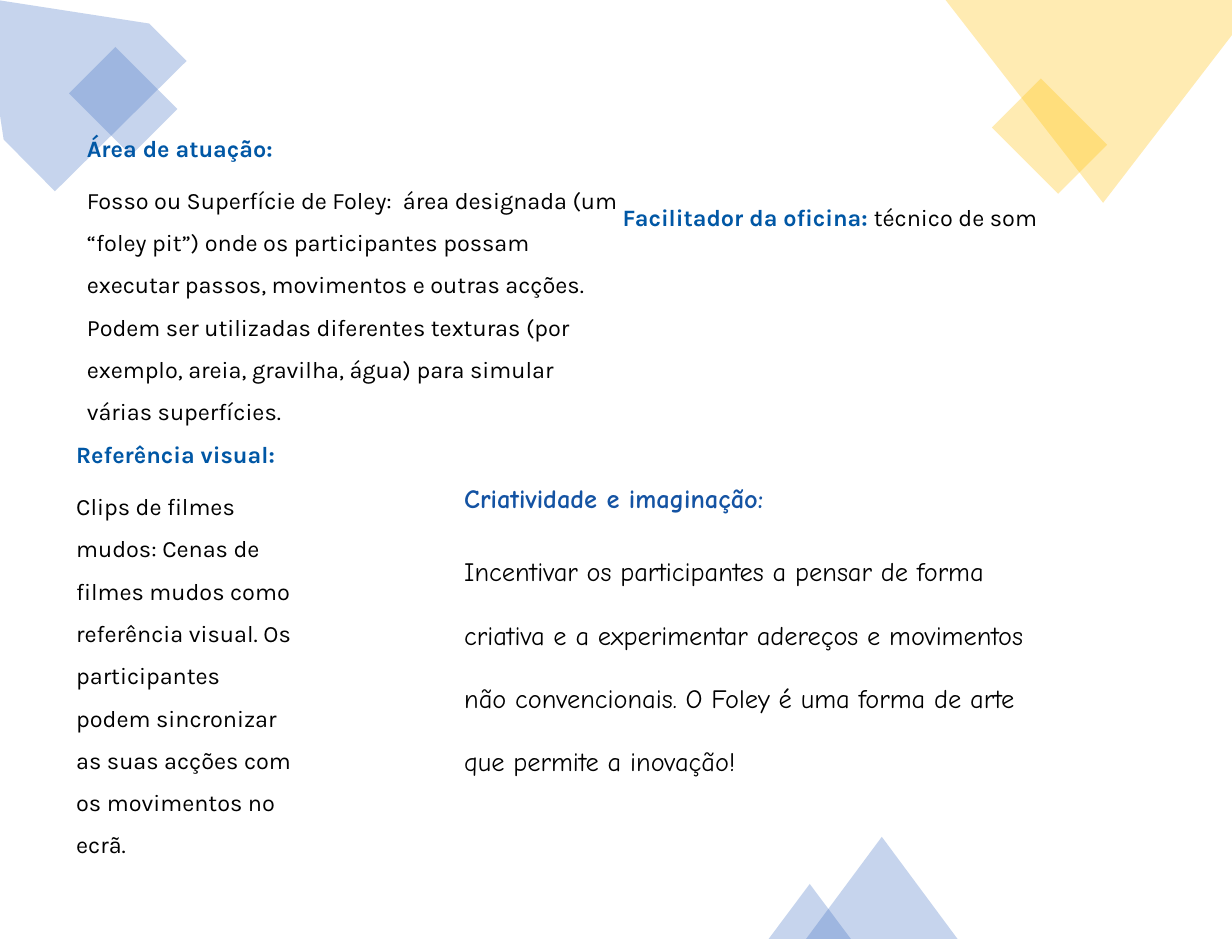
from lxml import etree
from pptx import Presentation, util as u
from pptx.dml.color import RGBColor
from pptx.enum import shapes as s, text as t
from pptx.oxml.ns import qn

BLUE = RGBColor(0x44, 0x72, 0xC4)
GOLD = RGBColor(0xFF, 0xC0, 0x00)
NAVY = RGBColor(0x00, 0x57, 0xA5)
COBALT = RGBColor(0x14, 0x53, 0xA3)
BLACK = RGBColor(0, 0, 0)

RECT = s.MSO_SHAPE.RECTANGLE
PEAK = s.MSO_SHAPE.ISOSCELES_TRIANGLE

CORNERS = [
    (BLUE, [(3.23, 0.51), (0, 0.01), (0, 2.49), (0.08, 3.02),
            (1.19, 4.14), (4.04, 1.32)]),
    (GOLD, [(26.67, 0), (20.47, 0), (23.88, 4.39), (26.67, 0.76)]),
]
FORMS = [
    (RECT, BLUE, (1.96, 1.24, 1.42, 1.9), 315),
    (RECT, GOLD, (21.97, 1.93, 1.5, 2.03), 315),
    (PEAK, BLUE, (17.45, 18.11, 3.28, 2.21), 0),
    (PEAK, BLUE, (16.64, 19.13, 1.78, 1.19), 0),
]

KARLA = dict(font="Karla", size=14.4, color=NAVY, lead=1.5)
COMIC = dict(font="Comic Neue", size=16.2, color=COBALT, lead=2.0)
NOTES = [
    ((1.63, 2.77, 12.01, 5.61), "Área de atuação:",
     "Fosso ou Superfície de Foley:  área designada (um “foley pit”) onde os "
     "participantes possam executar passos, movimentos e outras acções. Podem "
     "ser utilizadas diferentes texturas (por exemplo, areia, gravilha, água) "
     "para simular várias superfícies.", KARLA),
    ((1.4, 9.4, 5.23, 8.38), "Referência visual:",
     "Clips de filmes mudos: Cenas de filmes mudos como referência visual. Os "
     "participantes podem sincronizar as suas acções com os movimentos no ecrã.",
     KARLA),
    ((13.23, 4.27, 12.01, 0.86), "Facilitador da oficina: ",
     "técnico de som", KARLA | dict(lead=None)),
    ((9.8, 10.31, 12.62, 6.6), "Criatividade e imaginação:",
     "Incentivar os participantes a pensar de forma criativa e a experimentar "
     "adereços e movimentos não convencionais. O Foley é uma forma de arte que "
     "permite a inovação!", COMIC),
]


def tint(shape, color):
    shape.shadow.inherit = False
    shape.line.fill.background()
    shape.fill.solid()
    shape.fill.fore_color.rgb = color
    tone = next(shape.fill._xPr.iter(qn("a:srgbClr")))
    etree.SubElement(tone, qn("a:alpha"), val="30000")


def write(para, words, font, size, color, bold=False):
    run = para.add_run()
    run.text = words
    run.font.name = font
    run.font.size = u.Pt(size)
    run.font.color.rgb = color
    run.font.bold = bold
    para.space_after = u.Pt(6)


def note(slide, box, head, body, font, size, color, lead):
    frame = slide.shapes.add_textbox(*map(u.Cm, box)).text_frame
    frame.word_wrap = True
    frame.auto_size = t.MSO_AUTO_SIZE.SHAPE_TO_FIT_TEXT
    para = frame.paragraphs[0]
    write(para, head, font, size, color, bold=True)
    if lead:
        para = frame.add_paragraph()
        para.line_spacing = lead
    write(para, body, font, size, BLACK)


def main():
    deck = Presentation()
    deck.slide_width, deck.slide_height = u.Cm(26.67), u.Cm(20.32)
    slide = deck.slides.add_slide(deck.slide_layouts[6])
    for color, points in CORNERS:
        first, *rest = [(u.Cm(x), u.Cm(y)) for x, y in points]
        pen = slide.shapes.build_freeform(*first)
        pen.add_line_segments(rest, close=True)
        tint(pen.convert_to_shape(), color)
    for kind, color, box, turn in FORMS:
        form = slide.shapes.add_shape(kind, *map(u.Cm, box))
        form.rotation = turn
        tint(form, color)
    for box, head, body, style in NOTES:
        note(slide, box, head, body, **style)
    deck.save("out.pptx")


if __name__ == "__main__":
    main()
